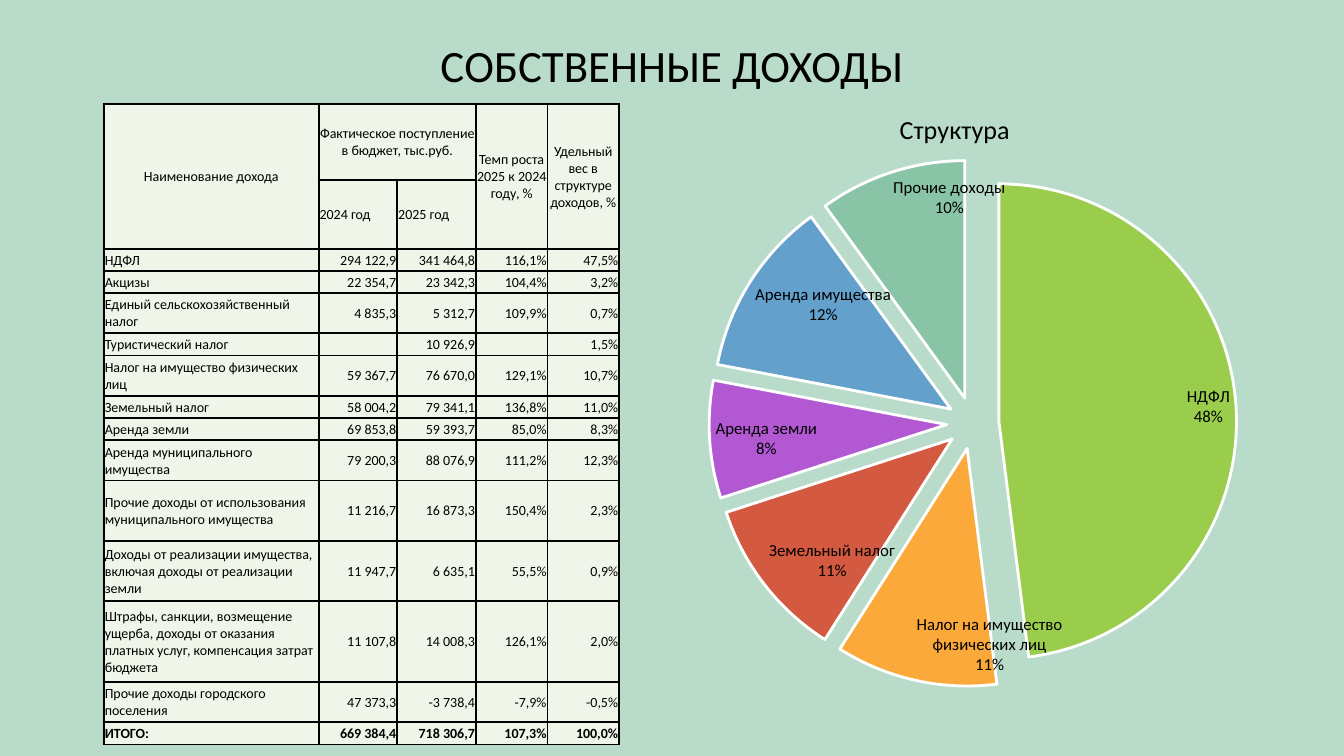
from typing import Any, NamedTuple

import pptx
import pptx.chart.data
import pptx.dml.color
import pptx.enum.chart
import pptx.enum.text
import pptx.oxml.ns
import pptx.slide
import pptx.util
from lxml import etree

Inches = pptx.util.Inches
Pt = pptx.util.Pt
RGBColor = pptx.dml.color.RGBColor
Align = pptx.enum.text.PP_ALIGN
MIDDLE = pptx.enum.text.MSO_ANCHOR.MIDDLE
qn = pptx.oxml.ns.qn

FONT = "Calibri"
MINT = RGBColor(0xB9, 0xDC, 0xCA)
PALE = RGBColor(0xEF, 0xF6, 0xE9)
BLACK = RGBColor(0, 0, 0)
WHITE = RGBColor(0xFF, 0xFF, 0xFF)
GREEN = RGBColor(0x9A, 0xCD, 0x4C)
ORANGE = RGBColor(0xFA, 0xA9, 0x3A)
RED = RGBColor(0xD3, 0x59, 0x40)
PURPLE = RGBColor(0xB2, 0x58, 0xD3)
BLUE = RGBColor(0x63, 0xA0, 0xCC)
TEAL = RGBColor(0x8A, 0xC4, 0xA7)


class Row(NamedTuple):
    height: float
    name: str
    past: str
    now: str
    growth: str
    share: str


class Slice(NamedTuple):
    name: str
    share: int
    color: RGBColor


WIDTHS = (2.13, 0.78, 0.78, 0.71, 0.71)
ROWS = (
    Row(0.76, "Наименование дохода", "Фактическое поступление в бюджет, тыс.руб.", "",
        "Темп роста 2025 к 2024 году, %", "Удельный вес в структуре доходов, %"),
    Row(0.22, "", "2024 год", "2025 год", "", ""),
    Row(0.22, "НДФЛ", "294 122,9", "341 464,8", "116,1%", "47,5%"),
    Row(0.22, "Акцизы", "22 354,7", "23 342,3", "104,4%", "3,2%"),
    Row(0.4, "Единый сельскохозяйственный налог", "4 835,3", "5 312,7", "109,9%", "0,7%"),
    Row(0.22, "Туристический налог", "", "10 926,9", "", "1,5%"),
    Row(0.4, "Налог на имущество физических лиц", "59 367,7", "76 670,0", "129,1%", "10,7%"),
    Row(0.22, "Земельный налог", "58 004,2", "79 341,1", "136,8%", "11,0%"),
    Row(0.22, "Аренда земли", "69 853,8", "59 393,7", "85,0%", "8,3%"),
    Row(0.4, "Аренда муниципального имущества", "79 200,3", "88 076,9", "111,2%", "12,3%"),
    Row(0.6, "Прочие доходы от использования муниципального имущества",
        "11 216,7", "16 873,3", "150,4%", "2,3%"),
    Row(0.6, "Доходы от реализации имущества, включая доходы от реализации земли",
        "11 947,7", "6 635,1", "55,5%", "0,9%"),
    Row(0.8, "Штрафы, санкции, возмещение ущерба, доходы от оказания платных услуг, "
        "компенсация затрат бюджета", "11 107,8", "14 008,3", "126,1%", "2,0%"),
    Row(0.4, "Прочие доходы городского поселения", "47 373,3", "-3 738,4", "-7,9%", "-0,5%"),
    Row(0.22, "ИТОГО:", "669 384,4", "718 306,7", "107,3%", "100,0%"),
)
MERGES = (((0, 0), (1, 0)), ((0, 1), (0, 2)), ((0, 3), (1, 3)), ((0, 4), (1, 4)))
SLICES = (
    Slice("НДФЛ", 48, GREEN),
    Slice("Налог на имущество физических лиц", 11, ORANGE),
    Slice("Земельный налог", 11, RED),
    Slice("Аренда земли", 8, PURPLE),
    Slice("Аренда имущества", 12, BLUE),
    Slice("Прочие доходы", 10, TEAL),
)


def style(font: Any, size: float, bold: bool = False) -> None:
    font.name = FONT
    font.size = Pt(size)
    font.bold = bold
    font.color.rgb = BLACK


def write(para: Any, text: str, size: float, align: Align, bold: bool = False) -> None:
    para.alignment = align
    if text:
        run = para.add_run()
        run.text = text
        style(run.font, size, bold)
    else:
        etree.SubElement(para._p, qn("a:endParaRPr"), sz=str(int(size * 100)))


def border(cell: Any) -> None:
    props = cell._tc.get_or_add_tcPr()
    for side in ("lnL", "lnR", "lnT", "lnB"):
        line = etree.SubElement(props, qn(f"a:{side}"), w=str(Pt(1.5)))
        fill = etree.SubElement(line, qn("a:solidFill"))
        etree.SubElement(fill, qn("a:srgbClr"), val=str(BLACK))


def draw_title(slide: pptx.slide.Slide) -> None:
    box = slide.shapes.add_textbox(Inches(1.25), Inches(0.4), Inches(10.83), Inches(0.55))
    frame = box.text_frame
    frame.word_wrap = True
    frame.vertical_anchor = MIDDLE
    para = frame.paragraphs[0]
    para.line_spacing = 0.9
    write(para, "СОБСТВЕННЫЕ ДОХОДЫ", 32, Align.CENTER)


def draw_table(slide: pptx.slide.Slide) -> None:
    table = slide.shapes.add_table(
        len(ROWS), len(WIDTHS), Inches(1.03), Inches(1.03),
        Inches(sum(WIDTHS)), Inches(sum(row.height for row in ROWS))).table
    table.first_row = table.horz_banding = False
    for column, width in zip(table.columns, WIDTHS):
        column.width = Inches(width)
    for r, row in enumerate(ROWS):
        table.rows[r].height = Inches(row.height)
        for c, text in enumerate(row[1:]):
            cell = table.cell(r, c)
            border(cell)
            cell.fill.solid()
            cell.fill.fore_color.rgb = PALE
            cell.vertical_anchor = MIDDLE
            cell.margin_left = cell.margin_right = cell.margin_top = Inches(0.01)
            cell.margin_bottom = 0
            if r == 0:
                align = Align.CENTER
            else:
                align = Align.LEFT if r == 1 or c == 0 else Align.RIGHT
            write(cell.text_frame.paragraphs[0], text, 10, align, r == len(ROWS) - 1)
    for start, end in MERGES:
        table.cell(*start).merge(table.cell(*end))


def place_plot(chart: Any, x: float, y: float, w: float, h: float) -> None:
    """Set the inner plot area as fractions of the chart."""
    area = chart._chartSpace.find(".//" + qn("c:plotArea"))
    layout = area.find(qn("c:layout"))
    if layout is None:
        layout = etree.Element(qn("c:layout"))
        area.insert(0, layout)
    manual = etree.SubElement(layout, qn("c:manualLayout"))
    parts = {"layoutTarget": "inner", "xMode": "edge", "yMode": "edge",
             "x": x, "y": y, "w": w, "h": h}
    for tag, val in parts.items():
        etree.SubElement(manual, qn(f"c:{tag}"), val=str(val))


def draw_chart(slide: pptx.slide.Slide) -> None:
    data = pptx.chart.data.CategoryChartData()
    data.categories = [part.name for part in SLICES]
    data.add_series("Структура", [part.share for part in SLICES])
    chart = slide.shapes.add_chart(
        pptx.enum.chart.XL_CHART_TYPE.PIE_EXPLODED, Inches(6.48), Inches(0.88),
        Inches(5.98), Inches(6.38), data).chart
    style(chart.font, 10)
    chart.has_legend = False
    chart.has_title = True
    write(chart.chart_title.text_frame.paragraphs[0], "Структура", 18.6, Align.CENTER)
    place_plot(chart, 0.06, 0.11, 0.94, 0.82)

    plot = chart.plots[0]
    plot.vary_by_categories = True
    pie = plot.series[0]
    pie._element.find(qn("c:explosion")).set("val", "11")
    for i, part in enumerate(SLICES):
        shape = pie.points[i].format
        shape.fill.solid()
        shape.fill.fore_color.rgb = part.color
        shape.line.color.rgb = WHITE
        shape.line.width = Pt(2)

    labels = pie.data_labels
    labels.show_value = False
    labels.show_category_name = labels.show_percentage = True
    labels.number_format = "0%"
    labels.number_format_is_linked = False
    labels.position = pptx.enum.chart.XL_LABEL_POSITION.INSIDE_END
    style(labels.font, 12)
    break_line = etree.Element(qn("c:separator"))
    break_line.text = "\n"
    labels._element.find(qn("c:showBubbleSize")).addnext(break_line)


def main() -> None:
    deck = pptx.Presentation()
    deck.slide_width = Inches(13.33)
    deck.slide_height = Inches(7.5)
    slide = deck.slides.add_slide(deck.slide_layouts[6])
    slide.background.fill.solid()
    slide.background.fill.fore_color.rgb = MINT
    draw_title(slide)
    draw_table(slide)
    draw_chart(slide)
    deck.save("out.pptx")


if __name__ == "__main__":
    main()
